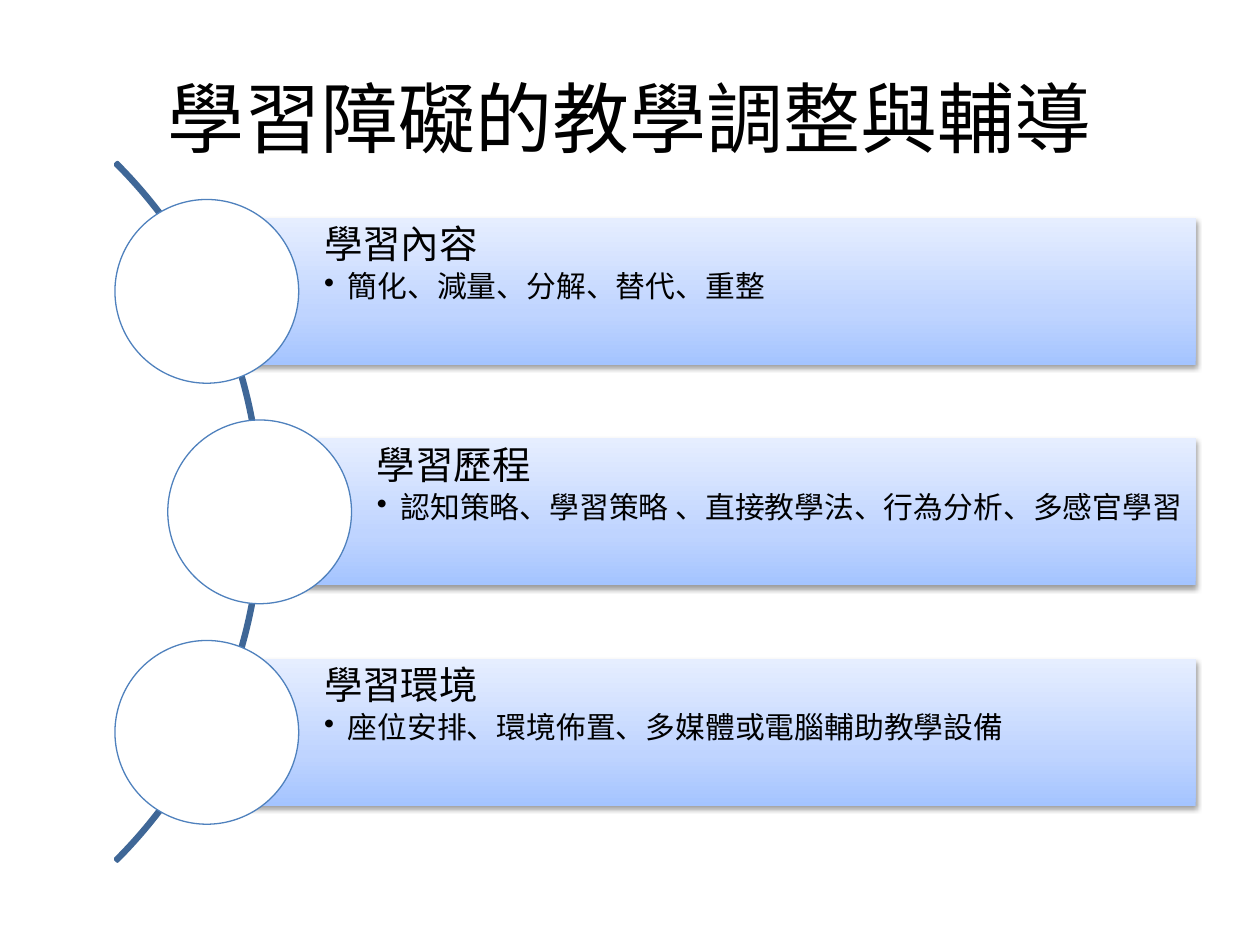
from copy import deepcopy
from dataclasses import dataclass

from lxml import etree
from pptx import Presentation
from pptx.dml.color import RGBColor
from pptx.enum.shapes import MSO_SHAPE as Kind
from pptx.enum.text import MSO_ANCHOR as Anchor, PP_ALIGN as Align
from pptx.oxml.ns import qn
from pptx.util import Pt

MID_Y, PITCH = 292.5, 126      # centre of the middle row, row distance
BAR_H, BAR_END = 84, 683.3
DISC, ARC = 105, 564.5         # diameters
ARC_X = -414.7
STOPS = [(0, "A4C4FF"), (0.35, "BFD4FF"), (1, "E6EEFF")]
CJK = "Noto Sans CJK SC"


@dataclass
class Row:
    left: float                # bar's left edge and disc's centre
    head: str
    body: str


ROWS = [
    Row(118.2, "學習內容", "簡化、減量、分解、替代、重整"),
    Row(148.4, "學習歷程", "認知策略、學習策略 、直接教學法、行為分析、多感官學習"),
    Row(118.2, "學習環境", "座位安排、環境佈置、多媒體或電腦輔助教學設備"),
]


def color(code: str) -> RGBColor:
    return RGBColor.from_string(code)


def add_run(para, text: str, size: float, font: str) -> None:
    run = para.add_run()
    run.text = text
    run.font.size, run.font.name = Pt(size), font
    run.font.color.rgb = color("000000")
    etree.SubElement(run.font._element, qn("a:ea"), typeface=CJK)


def add_form(slide, kind, left: float, top: float, wide: float, high: float):
    form = slide.shapes.add_shape(kind, Pt(left), Pt(top), Pt(wide), Pt(high))
    form.shadow.inherit = False
    return form


def set_line(form, code: str, width: float) -> None:
    form.line.color.rgb = color(code)
    form.line.width = Pt(width)


def set_fade(form) -> None:
    fill = form.fill
    fill.gradient()
    fill.gradient_angle = 90
    stops = form._element.spPr.find(".//" + qn("a:gsLst"))
    stops.append(deepcopy(stops[-1]))
    for stop, (place, code) in zip(fill.gradient_stops, STOPS):
        stop.position = place
        stop.color.rgb = color(code)


def set_shade(form) -> None:
    effects = form._element.spPr.find(qn("a:effectLst"))
    shade = etree.SubElement(
        effects, qn("a:outerShdw"), blurRad=str(Pt(3.1)), dist=str(Pt(1.6)),
        dir="5400000", rotWithShape="0")
    tint = etree.SubElement(shade, qn("a:srgbClr"), val="000000")
    etree.SubElement(tint, qn("a:alpha"), val="38000")


def add_bullet(para) -> None:
    props = para._p.get_or_add_pPr()
    props.set("marL", str(Pt(13.5)))
    props.set("indent", str(Pt(-13.5)))
    etree.SubElement(props, qn("a:buChar"), char="•")


def add_row(slide, row: Row, mid: float) -> None:
    # Bar with heading and bullet
    bar = add_form(slide, Kind.RECTANGLE, row.left, mid - BAR_H / 2,
                   BAR_END - row.left, BAR_H)
    set_fade(bar)
    bar.line.fill.background()
    set_shade(bar)
    frame = bar.text_frame
    frame.word_wrap = True
    frame.vertical_anchor = Anchor.TOP
    frame.margin_left = Pt(67)
    frame.margin_top = frame.margin_right = frame.margin_bottom = Pt(4.3)
    head, body = frame.paragraphs[0], frame.add_paragraph()
    for para in (head, body):
        para.alignment = Align.LEFT
        para.line_spacing = 0.9
    head.space_after = Pt(3)
    add_run(head, row.head, 22, "Calibri")
    body.level = 1
    add_bullet(body)
    add_run(body, row.body, 17, "Calibri")

    # Disc over the bar's left edge
    disc = add_form(slide, Kind.OVAL, row.left - DISC / 2, mid - DISC / 2,
                    DISC, DISC)
    disc.fill.solid()
    disc.fill.fore_color.rgb = color("FFFFFF")
    set_line(disc, "4F81BD", 0.75)


def main() -> None:
    deck = Presentation()
    deck.slide_width, deck.slide_height = Pt(720), Pt(540)
    slide = deck.slides.add_slide(deck.slide_layouts[6])

    # Title
    box = slide.shapes.add_textbox(Pt(36), Pt(21.6), Pt(648), Pt(90))
    frame = box.text_frame
    frame.word_wrap = True
    frame.vertical_anchor = Anchor.MIDDLE
    frame.paragraphs[0].alignment = Align.CENTER
    add_run(frame.paragraphs[0], "學習障礙的教學調整與輔導", 44, CJK)

    # Arc behind the discs
    arc = add_form(slide, Kind.BLOCK_ARC, ARC_X, MID_Y - ARC / 2, ARC, ARC)
    for i, value in enumerate((189, 27, 0.003)):
        arc.adjustments[i] = value
    arc.fill.background()
    set_line(arc, "3F6797", 2)

    # Rows
    for i, row in enumerate(ROWS):
        add_row(slide, row, MID_Y + PITCH * (i - 1))

    deck.save("out.pptx")


if __name__ == "__main__":
    main()
